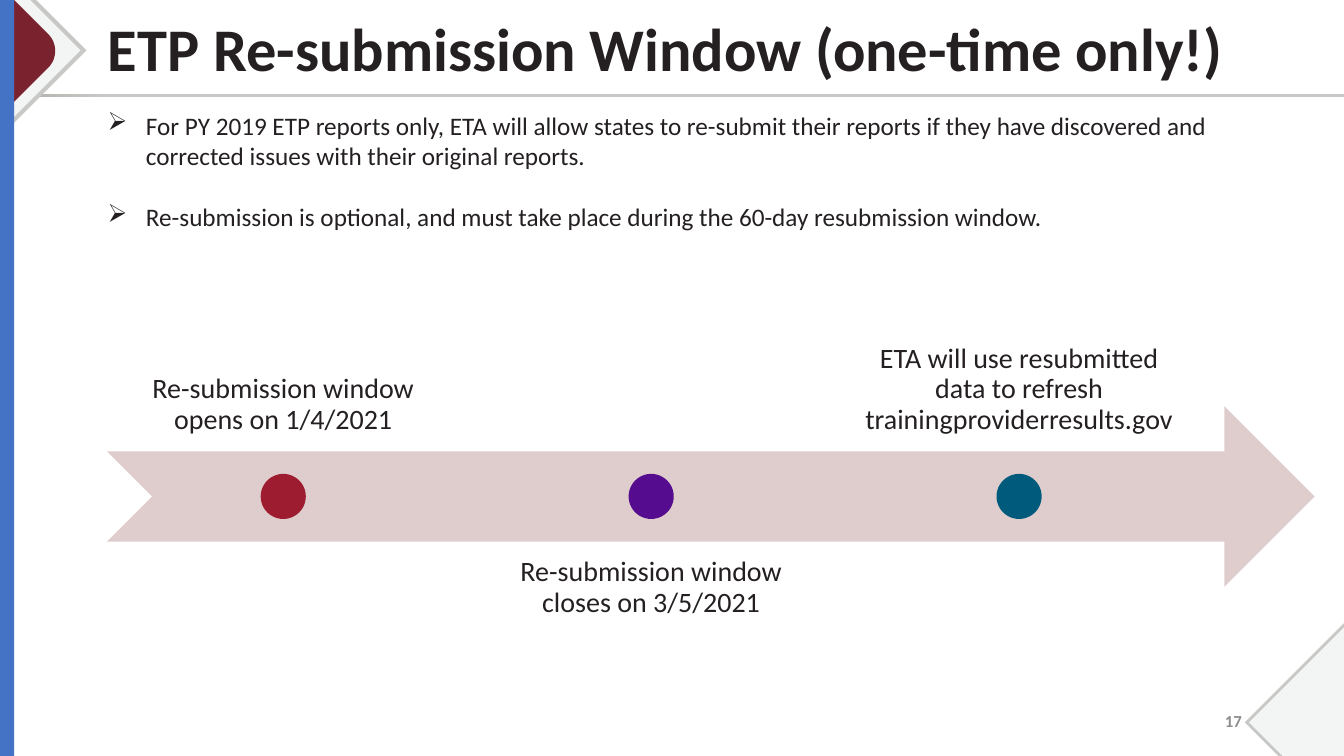
"""Builds the ETP re-submission window slide with its three-step timeline."""
from dataclasses import dataclass

from lxml.etree import SubElement
from pptx import Presentation
from pptx.dml.color import RGBColor as Rgb
from pptx.enum.shapes import MSO_SHAPE as Shape
from pptx.enum.text import MSO_ANCHOR as Anchor, MSO_AUTO_SIZE as Fit, PP_ALIGN as Align
from pptx.oxml.ns import qn
from pptx.util import Emu, Inches, Pt


@dataclass(frozen=True)
class Theme:
    """Font, colours and type sizes of the slide."""
    font: str = "Calibri"
    ink: str = "242021"
    muted: str = "8E8D8D"
    edge: str = "C8C8C6"
    edge_dark: str = "ABABA8"
    pale: str = "F3F4F4"
    maroon: str = "7A232F"
    sidebar: str = "4472C4"
    arrow: str = "DFCDCD"
    opening: str = "9E1C30"
    closing: str = "550C8F"
    refresh: str = "005A7C"
    title: float = 43.2
    step: float = 20
    body: float = 18
    number: float = 12


class SlideBuilder:
    """Draws on one slide laid out as a grid of 160 columns by 90 rows."""

    columns, rows = 160, 90

    def __init__(self, deck, theme):
        """Adds a title-only slide and measures its grid cell."""
        self.theme = theme
        self.slide = deck.slides.add_slide(deck.slide_layouts[5])
        self.cell = deck.slide_width / self.columns

    def emu(self, *cells):
        """Converts grid cells to slide lengths."""
        return [Emu(round(count * self.cell)) for count in cells]

    def paint(self, shape, color):
        """Gives a shape a plain fill with no line or shadow."""
        shape.shadow.inherit = False
        shape.line.fill.background()
        shape.fill.solid()
        shape.fill.fore_color.rgb = Rgb.from_string(color)
        return shape

    def preset(self, kind, at, color):
        """Adds a filled preset shape."""
        return self.paint(self.slide.shapes.add_shape(kind, *self.emu(*at)), color)

    def outline(self, points, color):
        """Adds a filled closed outline."""
        start, *others = [self.emu(*point) for point in points]
        builder = self.slide.shapes.build_freeform(*start)
        builder.add_line_segments(others, close=True)
        return self.paint(builder.convert_to_shape(), color)

    def rule(self, at):
        """Adds the shaded line under the title."""
        fill = self.preset(Shape.RECTANGLE, at, self.theme.edge).fill
        fill.gradient()
        fill.gradient_angle = 0
        shades = (0, self.theme.edge_dark), (0.08, self.theme.edge)
        for stop, (position, color) in zip(fill.gradient_stops, shades):
            stop.position = position
            stop.color.rgb = Rgb.from_string(color)

    def style(self, paragraph, size, color, bold=False, align=Align.LEFT):
        """Formats a paragraph and its runs."""
        paragraph.alignment = align
        for run in paragraph.runs:
            run.font.name = self.theme.font
            run.font.size = Pt(size)
            run.font.bold = bold
            run.font.color.rgb = Rgb.from_string(color)

    def title(self, text, at):
        """Fills and places the title placeholder."""
        heading = self.slide.shapes.title
        heading.left, heading.top, heading.width, heading.height = self.emu(*at)
        frame = heading.text_frame
        frame.text = text
        frame.word_wrap = True
        frame.auto_size = Fit.NONE
        frame.vertical_anchor = Anchor.MIDDLE
        frame.paragraphs[0].line_spacing = 0.9
        self.style(frame.paragraphs[0], self.theme.title, self.theme.ink, True)

    def text(self, content, at, anchor=Anchor.TOP):
        """Adds a wrapping text box and returns its frame."""
        frame = self.slide.shapes.add_textbox(*self.emu(*at)).text_frame
        frame.text = content
        frame.word_wrap = True
        frame.vertical_anchor = anchor
        return frame

    def bullets(self, points, at, gap):
        """Adds a list with arrowhead bullets."""
        frame = self.text("\n".join(points), at)
        indent = Inches(0.38)
        for index, paragraph in enumerate(frame.paragraphs):
            properties = paragraph._p.get_or_add_pPr()
            properties.set("marL", str(indent))
            properties.set("indent", str(-indent))
            SubElement(properties, qn("a:buChar")).set("char", "➢")
            if index:
                paragraph.space_before = Pt(gap)
            self.style(paragraph, self.theme.body, self.theme.ink)

    def step_label(self, content, at, anchor):
        """Adds a centred timeline label."""
        frame = self.text(content, at, anchor)
        frame.margin_left = frame.margin_right = Inches(0.16)
        frame.margin_top = frame.margin_bottom = Inches(0.16)
        frame.paragraphs[0].line_spacing = 0.9
        self.style(frame.paragraphs[0], self.theme.step, self.theme.ink, align=Align.CENTER)

    def timeline(self, steps, at):
        """Adds the arrow with a dot and an alternating label per step."""
        left, top, width, height = at
        self.preset(Shape.NOTCHED_RIGHT_ARROW, at, self.theme.arrow)
        dot, label_width, pitch = height / 4, 41.76, 43.8
        for index, (content, color) in enumerate(steps):
            label_left = left + 0.1 + index * pitch
            below = index % 2
            label_top = top + height * 3 / 4 if below else top - height * 3 / 4
            anchor = Anchor.TOP if below else Anchor.BOTTOM
            self.step_label(content, (label_left, label_top, label_width, height), anchor)
            dot_left = label_left + (label_width - dot) / 2
            self.preset(Shape.OVAL, (dot_left, top + (height - dot) / 2, dot, dot), color)

    def page_number(self, number, at):
        """Adds the page number."""
        frame = self.text(number, at, Anchor.MIDDLE)
        self.style(frame.paragraphs[0], self.theme.number, self.theme.muted, True, Align.RIGHT)


def curve(start, pull_start, pull_end, end, count=16):
    """Returns points along a cubic curve."""
    def blend(t, a, b, c, d):
        """Weighs four coordinates at one place on the curve."""
        u = 1 - t
        return u**3 * a + 3 * u * u * t * b + 3 * u * t * t * c + t**3 * d

    axes = list(zip(start, pull_start, pull_end, end))
    return [tuple(blend(i / count, *axis) for axis in axes) for i in range(count + 1)]


def main():
    """Builds and saves the slide."""
    deck = Presentation()
    deck.slide_width, deck.slide_height = Inches(40 / 3), Inches(7.5)
    theme = Theme()
    page = SlideBuilder(deck, theme)

    page.rule((0, 11.16, 160, 0.36))
    page.outline([(0, 0), (4.3, 0), (10.3, 6), (0, 16.3)], theme.edge)
    page.outline([(0, 0), (3.6, 0), (9.6, 6), (0, 15.6)], theme.pale)
    nose = curve((5.76, 4.08), (6.84, 5.16), (6.84, 6.96), (5.76, 8.04))
    page.outline([(0, 0), (1.68, 0), *nose, (0, 13.8)], theme.maroon)
    for tip, color in ((148.2, theme.edge), (148.7, theme.pale)):
        page.outline([(160, tip - 74), (160, 90), (tip + 4, 90), (tip, 86)], color)

    page.title("ETP Re-submission Window (one-time only!)", (11.64, 3.84, 150, 4.68))
    page.preset(Shape.RECTANGLE, (0, 0, 1.68, 90), theme.sidebar)
    page.page_number("17", (113.04, 83.4, 36, 4.8))
    page.timeline([
        ("Re-submission window opens on 1/4/2021", theme.opening),
        ("Re-submission window closes on 3/5/2021", theme.closing),
        ("ETA will use resubmitted data to refresh trainingproviderresults.gov", theme.refresh),
    ], (12.74, 48.36, 143.76, 21.48))
    page.bullets([
        "For PY 2019 ETP reports only, ETA will allow states to re-submit their reports "
        "if they have discovered and corrected issues with their original reports.",
        "Re-submission is optional, and must take place during the 60-day resubmission window.",
    ], (11.64, 12.48, 139.2, 15.72), gap=22)

    deck.save("out.pptx")


if __name__ == "__main__":
    main()
